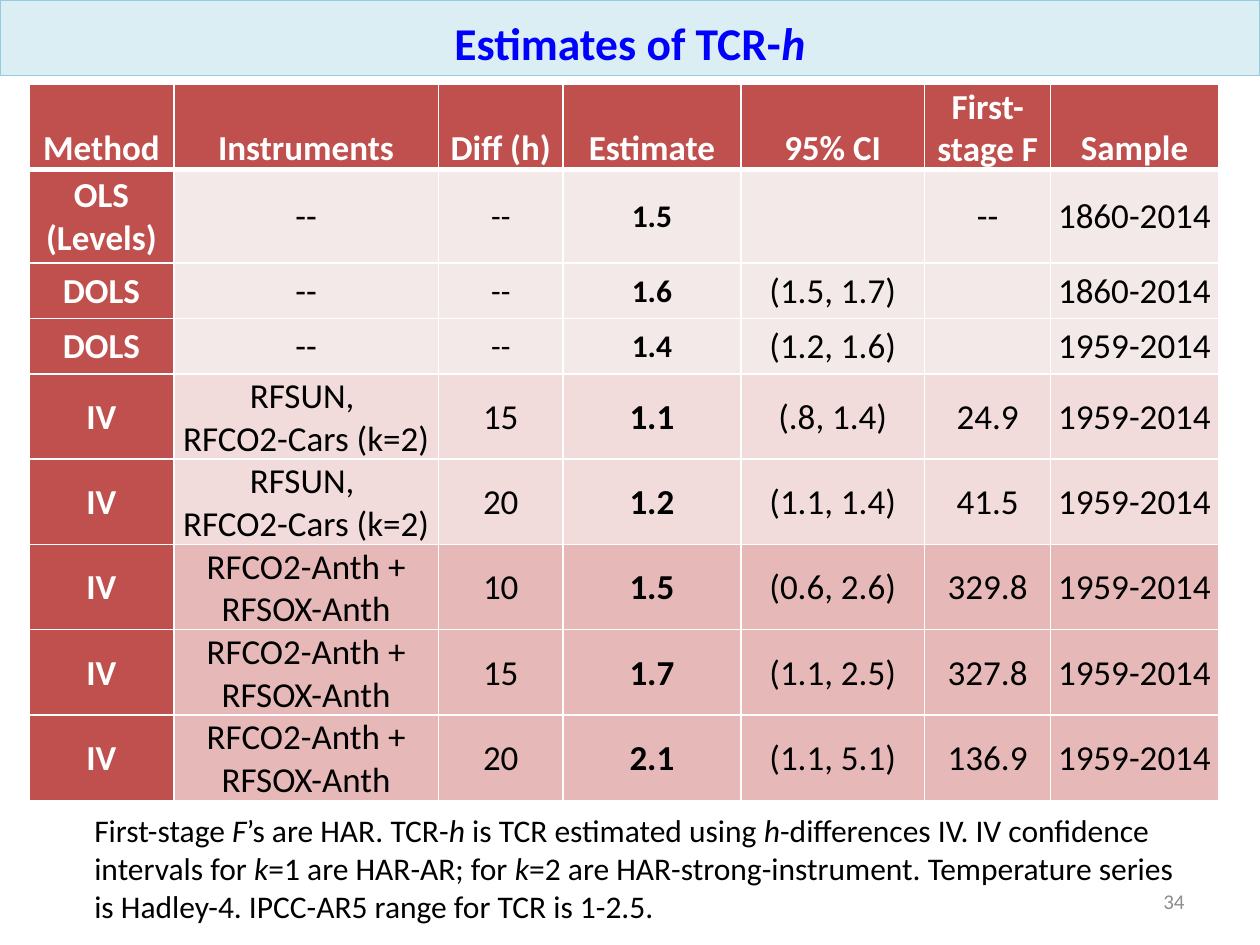
from dataclasses import dataclass

from lxml.etree import SubElement
from pptx import Presentation
from pptx.dml.color import RGBColor
from pptx.enum.shapes import MSO_SHAPE as Shape
from pptx.enum.text import MSO_ANCHOR as Anchor, MSO_AUTO_SIZE as AutoSize, PP_ALIGN as Align
from pptx.oxml.ns import qn
from pptx.util import Pt

COLORS = {
    "title": "0000FF", "banner": "DBEEF4", "banner_line": "93CDDD",
    "number": "8C8C8C", "text": "000000", "white": "FFFFFF", "header": "C0504D",
    "levels": "F4E9E9", "cars": "F2DCDB", "anthropogenic": "E6B9B8",
}
FONT = "Calibri"


@dataclass(frozen=True)
class TextStyle:
    size: float
    color: str = "text"
    bold: bool = False
    align: Align = Align.LEFT
    anchor: Anchor = Anchor.TOP


@dataclass(frozen=True)
class Frame:
    left: float
    top: float
    width: float
    height: float

    def lengths(self) -> list:
        return [Pt(value) for value in (self.left, self.top, self.width, self.height)]


@dataclass(frozen=True)
class Estimate:
    fill: str
    method: str
    instruments: str
    horizon: str
    value: str
    interval: str
    first_stage: str
    sample: str

    def texts(self) -> list[str]:
        return [self.method, self.instruments, self.horizon, self.value,
                self.interval, self.first_stage, self.sample]


TITLE = TextStyle(26, "title", True, Align.CENTER, Anchor.BOTTOM)
PAGE_NUMBER = TextStyle(12, "number", False, Align.RIGHT, Anchor.MIDDLE)
NOTE = TextStyle(18)
HEADER = TextStyle(20, "white", True, Align.CENTER, Anchor.BOTTOM)
METHOD = TextStyle(20, "white", True, Align.CENTER, Anchor.MIDDLE)
BODY = TextStyle(20, "text", False, Align.CENTER, Anchor.MIDDLE)
VALUE = TextStyle(20, "text", True, Align.CENTER, Anchor.MIDDLE)
SMALL_BODY = TextStyle(18, "text", False, Align.CENTER, Anchor.MIDDLE)
SMALL_VALUE = TextStyle(18, "text", True, Align.CENTER, Anchor.MIDDLE)

EARLY, LATE = "1860-2014", "1959-2014"
CARS = "RFSUN, \nRFCO2-Cars (k=2)"
ANTHROPOGENIC = "RFCO2-Anth + RFSOX-Anth"
HEADINGS = ["Method", "Instruments", "Diff (h)", "Estimate", "95% CI", "First-stage F", "Sample"]
ESTIMATES = [
    Estimate("levels", "OLS (Levels)", "--", "--", "1.5", "", "--", EARLY),
    Estimate("levels", "DOLS", "--", "--", "1.6", "(1.5, 1.7)", "", EARLY),
    Estimate("levels", "DOLS", "--", "--", "1.4", "(1.2, 1.6)", "", LATE),
    Estimate("cars", "IV", CARS, "15", "1.1", "(.8, 1.4)", "24.9", LATE),
    Estimate("cars", "IV", CARS, "20", "1.2", "(1.1, 1.4)", "41.5", LATE),
    Estimate("anthropogenic", "IV", ANTHROPOGENIC, "10", "1.5", "(0.6, 2.6)", "329.8", LATE),
    Estimate("anthropogenic", "IV", ANTHROPOGENIC, "15", "1.7", "(1.1, 2.5)", "327.8", LATE),
    Estimate("anthropogenic", "IV", ANTHROPOGENIC, "20", "2.1", "(1.1, 5.1)", "136.9", LATE),
]
NOTE_TEXT = (
    "First-stage *F*’s are HAR. TCR-*h* is TCR estimated using *h*-differences IV. "
    "IV confidence intervals for *k*=1 are HAR-AR; for *k*=2 are HAR-strong-instrument. "
    "Temperature series is Hadley-4. IPCC-AR5 range for TCR is 1-2.5."
)

TABLE_FRAME = Frame(16.56, 48.24, 679.68, 408.24)
COLUMN_WIDTHS = [82.8, 151.2, 71.28, 101.52, 105.12, 72, 95.76]
ONE_LINE, TWO_LINES, LEVELS_ROW = 31.68, 48.6, 53.28
ROW_HEIGHTS = [TWO_LINES, LEVELS_ROW, ONE_LINE, ONE_LINE] + [TWO_LINES] * 5


def rgb(name: str) -> RGBColor:
    return RGBColor.from_string(COLORS[name])


def write_text(text_frame, text: str, style: TextStyle) -> None:
    """Fill a text frame; newlines split paragraphs and *stars* mark italics."""
    for index, line in enumerate(text.split("\n")):
        para = text_frame.add_paragraph() if index else text_frame.paragraphs[0]
        para.alignment = style.align
        for part, words in enumerate(line.split("*")):
            if not words:
                continue
            span = para.add_run()
            span.text = words
            formats = {"name": FONT, "size": Pt(style.size),
                       "bold": style.bold, "italic": part % 2 == 1}
            for attribute, value in formats.items():
                setattr(span.font, attribute, value)
            span.font.color.rgb = rgb(style.color)


def add_banner(page, text: str) -> None:
    banner = page.shapes.add_shape(Shape.RECTANGLE, *Frame(0, 0, 720, 43.2).lengths())
    banner.shadow.inherit = False
    banner.fill.solid()
    banner.fill.fore_color.rgb = rgb("banner")
    banner.line.color.rgb = rgb("banner_line")
    banner.line.width = Pt(0)
    banner.text_frame.vertical_anchor = TITLE.anchor
    write_text(banner.text_frame, text, TITLE)


def add_text_box(page, frame: Frame, text: str, style: TextStyle,
                 auto_size: AutoSize = AutoSize.NONE) -> None:
    text_frame = page.shapes.add_textbox(*frame.lengths()).text_frame
    formats = {"word_wrap": True, "auto_size": auto_size, "vertical_anchor": style.anchor}
    for attribute, value in formats.items():
        setattr(text_frame, attribute, value)
    write_text(text_frame, text, style)


def add_borders(cell, widths: dict[str, float]) -> None:
    """Draw white cell borders; must run before the cell gets its fill."""
    properties = cell._tc.get_or_add_tcPr()
    for side, width in widths.items():
        line = SubElement(properties, qn(f"a:ln{side}"), w=str(Pt(width)))
        fill = SubElement(line, qn("a:solidFill"))
        SubElement(fill, qn("a:srgbClr"), val=COLORS["white"])


def style_for(row: int, column: int, text: str) -> TextStyle:
    if row == 0:
        return HEADER
    if column == 0:
        return METHOD
    is_levels = ESTIMATES[row - 1].fill == "levels"
    if column == 3:
        return SMALL_VALUE if is_levels else VALUE
    return SMALL_BODY if is_levels and column == 2 else BODY


def fill_cell(cell, row: int, column: int, text: str, fill: str) -> None:
    add_borders(cell, {"L": 1, "R": 1, "T": 3 if row == 1 else 1, "B": 3 if row == 0 else 1})
    cell.fill.solid()
    cell.fill.fore_color.rgb = rgb(fill)
    if text:
        style = style_for(row, column, text)
        formats = {"margin_left": Pt(0.72), "margin_right": Pt(0.72), "margin_top": Pt(0.72),
                   "margin_bottom": Pt(0), "vertical_anchor": style.anchor}
        for attribute, value in formats.items():
            setattr(cell, attribute, value)
        write_text(cell.text_frame, text, style)


def add_estimates_table(page) -> None:
    table = page.shapes.add_table(
        len(ROW_HEIGHTS), len(COLUMN_WIDTHS), *TABLE_FRAME.lengths()).table
    for column, width in zip(table.columns, COLUMN_WIDTHS):
        column.width = Pt(width)
    for row, height in zip(table.rows, ROW_HEIGHTS):
        row.height = Pt(height)
    lines = [("header", HEADINGS)] + [(item.fill, item.texts()) for item in ESTIMATES]
    for row, (fill, texts) in enumerate(lines):
        for column, text in enumerate(texts):
            fill_cell(table.cell(row, column), row, column, text, fill if column else "header")


def main() -> None:
    deck = Presentation()
    deck.slide_width, deck.slide_height = Pt(720), Pt(540)
    page = deck.slides.add_slide(deck.slide_layouts[6])
    add_banner(page, "Estimates of TCR-*h*")
    add_text_box(page, Frame(642.24, 500.4, 41.76, 28.8), "34", PAGE_NUMBER)
    add_text_box(page, Frame(46.8, 460.08, 637.2, 72.72), NOTE_TEXT, NOTE,
                 AutoSize.SHAPE_TO_FIT_TEXT)
    add_estimates_table(page)
    deck.save("out.pptx")


if __name__ == "__main__":
    main()
